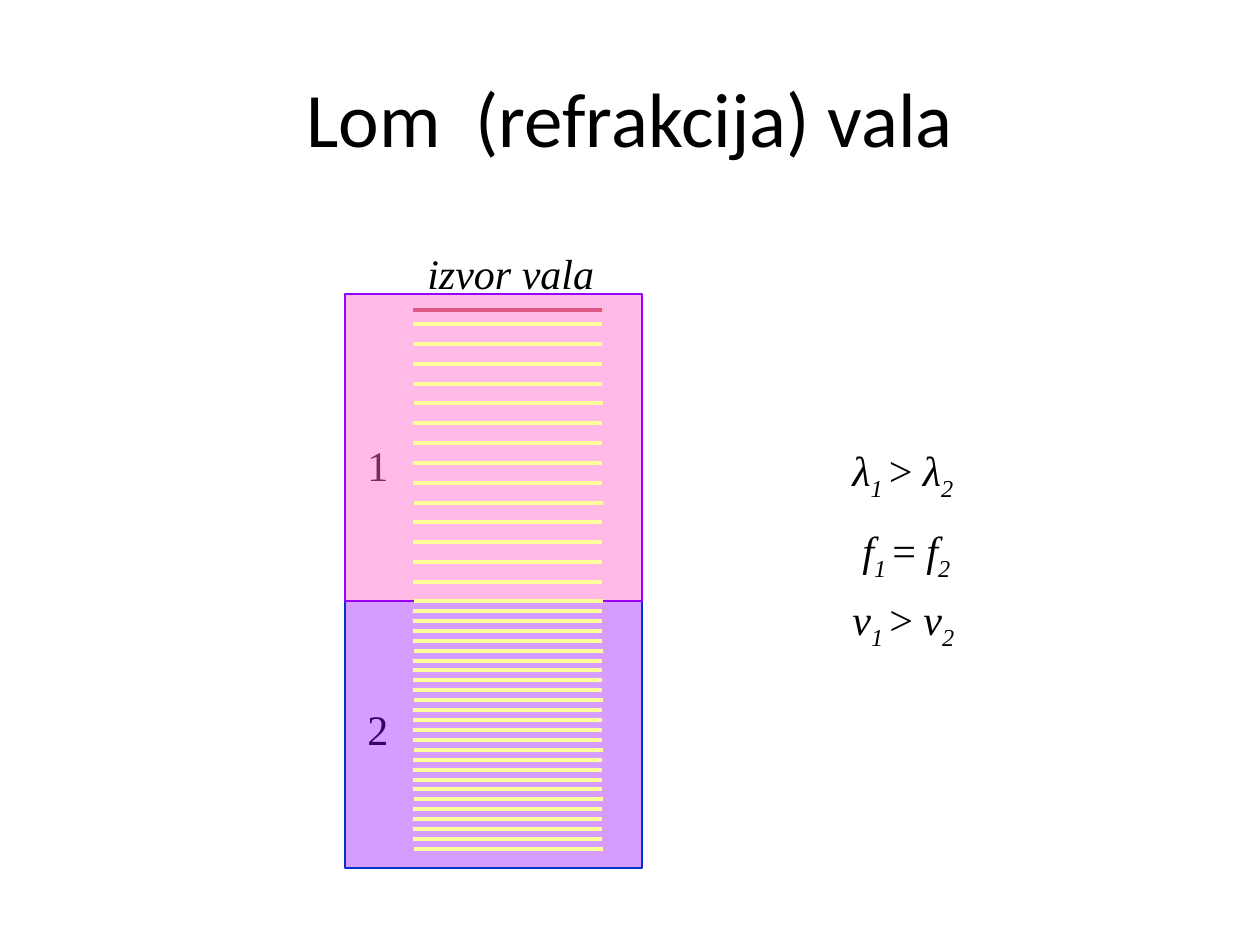
from lxml.etree import SubElement
from pptx import Presentation
from pptx.dml.color import RGBColor
from pptx.enum.shapes import MSO_CONNECTOR as Connector, MSO_SHAPE as Shape
from pptx.enum.text import MSO_ANCHOR as Anchor, MSO_AUTO_SIZE as AutoSize, PP_ALIGN as Align
from pptx.oxml.ns import qn
from pptx.util import Inches, Pt

EMU_PER_PX = Inches(1) / 126
COLORS = {
    "text": "000000",
    "wave": "FFFF99",
    "source": "C0504D",
    "medium_1": "FF66CC",
    "medium_1_line": "9900FF",
    "medium_2": "9900FF",
    "medium_2_line": "0033CC",
}
TITLE_FONT = {"name": "Calibri", "size": Pt(44)}
LABEL_FONT = {"name": "Times New Roman", "size": Pt(24)}

WAVE_LEFT, WAVE_WIDTH = 413, 189
# Wave fronts: first y, last y, number of fronts, place of the shifted one in each five
WAVES_1 = (324, 582, 14, 4)
WAVES_2 = (601, 849, 26, 0)


def px(length):
    return round(length * EMU_PER_PX)


def color(name):
    return RGBColor.from_string(COLORS[name])


def set_attributes(target, values):
    for name, value in values.items():
        setattr(target, name, value)


def add_run(paragraph, text, font, subscript=False):
    run = paragraph.add_run()
    run.text = text
    set_attributes(run.font, font)
    run.font.color.rgb = color("text")
    if subscript:
        run.font._element.set("baseline", "-25000")


def add_title(slide, text, box):
    title = slide.shapes.title
    set_attributes(title, dict(zip(("left", "top", "width", "height"), map(px, box))))
    title.text_frame.vertical_anchor = Anchor.MIDDLE
    paragraph = title.text_frame.paragraphs[0]
    paragraph.alignment = Align.CENTER
    add_run(paragraph, text, TITLE_FONT)


def add_label(slide, box, runs, wrap=False):
    """Add a text box; each run is (text, italic, subscript)."""
    frame = slide.shapes.add_textbox(*map(px, box)).text_frame
    set_attributes(frame, {
        "word_wrap": wrap,
        "auto_size": AutoSize.SHAPE_TO_FIT_TEXT,
        "vertical_anchor": Anchor.MIDDLE,
    })
    for text, italic, subscript in runs:
        add_run(frame.paragraphs[0], text, {**LABEL_FONT, "italic": italic}, subscript)


def add_relation(slide, box, symbol, sign, wrap=False):
    """Compare a quantity in medium 1 with the same one in medium 2."""
    add_label(slide, box, [
        (symbol, True, False),
        ("1 ", True, True),
        (f"{sign} ", False, False),
        (symbol, True, False),
        ("2", True, True),
    ], wrap)


def add_medium(slide, box, name, opacity):
    medium = slide.shapes.add_shape(Shape.RECTANGLE, *map(px, box))
    medium.shadow.inherit = False
    medium.fill.solid()
    medium.fill.fore_color.rgb = color(name)
    fill_color = medium._element.spPr.find(qn("a:solidFill"))[0]
    SubElement(fill_color, qn("a:alpha"), val=str(opacity * 1000))
    medium.line.color.rgb = color(f"{name}_line")
    medium.line.width = Pt(0.75)


def add_front(slide, left, y, color_name="wave"):
    front = slide.shapes.add_connector(
        Connector.STRAIGHT, px(left), px(y), px(left + WAVE_WIDTH), px(y))
    front.line.color.rgb = color(color_name)
    front.line.width = Pt(2.25)
    SubElement(front._element.spPr, qn("a:effectLst"))


def add_waves(slide, first, last, count, shifted):
    step = (last - first) / (count - 1)
    for index in range(count):
        shift = 1 if index % 5 == shifted else 0
        add_front(slide, WAVE_LEFT + shift, round(first + index * step))


def main():
    presentation = Presentation()
    presentation.slide_width = Inches(10)
    presentation.slide_height = Inches(7.5)
    slide = presentation.slides.add_slide(presentation.slide_layouts[5])

    add_title(slide, "Lom  (refrakcija) vala", (63, 38, 1134, 158))
    add_front(slide, WAVE_LEFT + 2, 310)
    add_label(slide, (355, 433, 58, 63), [("1", False, False)])
    add_label(slide, (355, 697, 58, 63), [("2", False, False)])
    add_front(slide, WAVE_LEFT, 310, "source")
    add_label(slide, (415, 241, 192, 63), [("izvor vala", True, False)])
    add_relation(slide, (840, 442, 140, 63), "λ", ">")
    add_relation(slide, (840, 591, 131, 63), "v", ">")
    add_relation(slide, (850, 522, 117, 63), "f", "=", wrap=True)

    add_medium(slide, (345, 601, 297, 267), "medium_2", 39)
    add_medium(slide, (345, 294, 297, 307), "medium_1", 45)
    for waves in (WAVES_1, WAVES_2):
        add_waves(slide, *waves)

    presentation.save("out.pptx")


if __name__ == "__main__":
    main()
